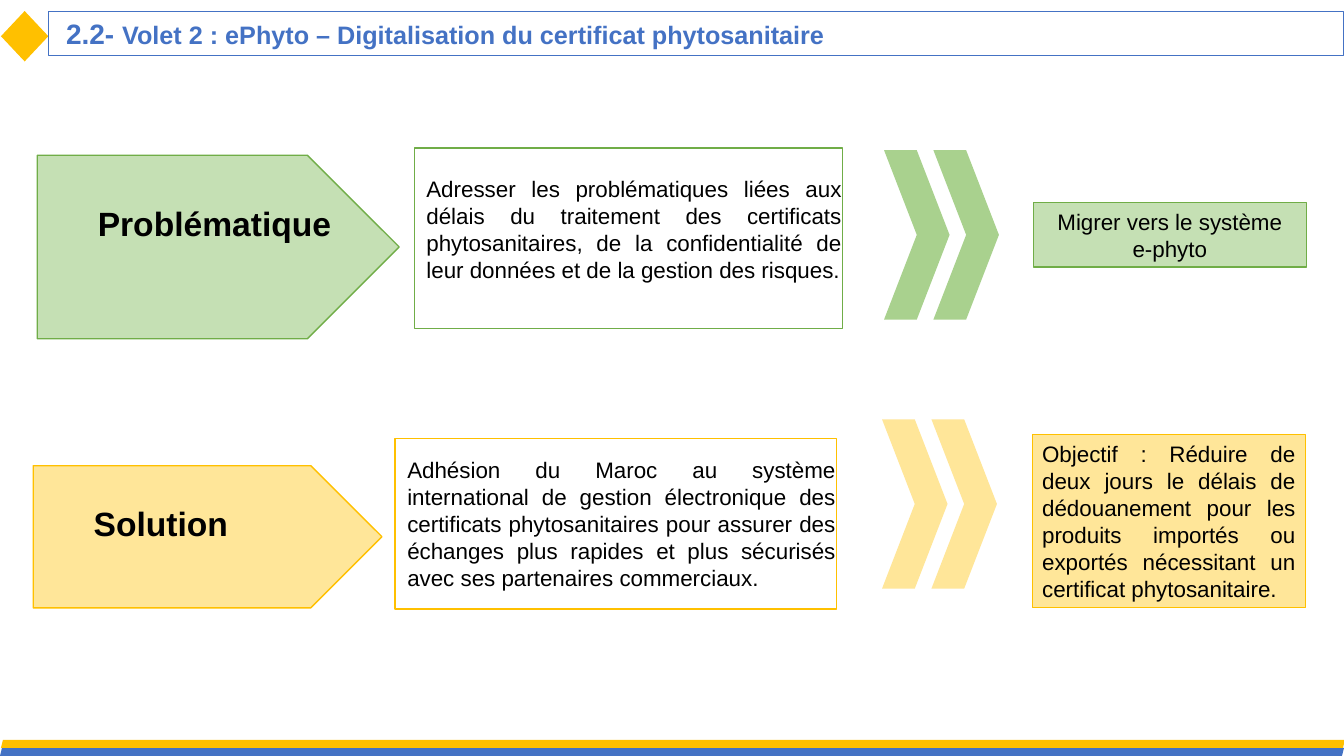
import pptx
import pptx.util
import pptx.dml.color
import pptx.enum.shapes
import pptx.enum.text

RGB = pptx.dml.color.RGBColor
KIND = pptx.enum.shapes.MSO_SHAPE
ALIGN = pptx.enum.text.PP_ALIGN
ANCHOR = pptx.enum.text.MSO_ANCHOR
Pt = pptx.util.Pt
CELL = pptx.util.Inches(0.1)
COLS, ROWS = 133.33, 75

BLACK = RGB(0x00, 0x00, 0x00)
WHITE = RGB(0xFF, 0xFF, 0xFF)
BLUE = RGB(0x44, 0x72, 0xC4)
GOLD = RGB(0xFF, 0xC0, 0x00)
CREAM = RGB(0xFF, 0xE6, 0x99)
GREEN = RGB(0x70, 0xAD, 0x47)
LEAF = RGB(0xA9, 0xD1, 0x8E)
MINT = RGB(0xC5, 0xE0, 0xB4)


def draw(slide, kind, box, slot, fill=None, line=None, width=1):
    left, top = box[0] + slot[0], box[1] + slot[1]
    spot = [round(n * CELL) for n in (left, top, slot[2], slot[3])]
    shape = slide.shapes.add_shape(kind, *spot)
    shape.shadow.inherit = False
    if fill is None:
        shape.fill.background()
    else:
        shape.fill.solid()
        shape.fill.fore_color.rgb = fill
    if line is None:
        shape.line.fill.background()
    else:
        shape.line.color.rgb = line
        shape.line.width = Pt(width)
    return shape


def write(shape, text, size=16, align=ALIGN.JUSTIFY, anchor=ANCHOR.MIDDLE,
          pads=(1, 0.5, 1, 0.5), bold=False, color=BLACK):
    frame = shape.text_frame
    frame.word_wrap = True
    frame.vertical_anchor = anchor
    (frame.margin_left, frame.margin_top,
     frame.margin_right, frame.margin_bottom) = [round(n * CELL) for n in pads]
    para = frame.paragraphs[0]
    para.text = text
    para.alignment = align
    font = para.font
    font.name, font.size, font.bold = "Arial", Pt(size), bold
    font.color.rgb = color
    return para


def header(slide, box):
    wide, high = box[2], box[3]
    draw(slide, KIND.DIAMOND, box, (0.1, 0, 4.7, high), GOLD)
    bar = draw(slide, KIND.RECTANGLE, box, (4.8, 0, wide - 4.8, 4.4),
               line=BLUE, width=0.75)
    para = write(bar, "2.2- ", 20, ALIGN.LEFT, pads=(1.75, 0.5, 1, 0.5),
                 bold=True, color=BLUE)
    run = para.add_run()
    run.text = "Volet 2 : ePhyto – Digitalisation du certificat phytosanitaire"
    run.font.size = Pt(18)


def footer(slide, box):
    half = box[3] / 2
    draw(slide, KIND.PARALLELOGRAM, box, (0, half, box[2], half), BLUE)
    draw(slide, KIND.PARALLELOGRAM, box, (0.1, 0, box[2], half), GOLD)


def band(slide, box, slots, texts, tones, drop, lift):
    pale, mid, edge = tones
    plate, body, arrow, goal = slots
    shape = draw(slide, KIND.PENTAGON, box, plate, pale, edge)
    write(shape, texts[0], 24, ALIGN.LEFT, ANCHOR.TOP,
          (6, drop, 1, 0.5), True)
    shape = draw(slide, KIND.RECTANGLE, box, body, WHITE, edge)
    write(shape, texts[1], pads=(1.2, 0.1, 0.1, lift))
    for step in range(2):
        place = (arrow[0] + step * 4.9, arrow[1], 6.5, 16.8)
        draw(slide, KIND.CHEVRON, box, place, mid)
    shape = draw(slide, KIND.RECTANGLE, box, goal, pale, edge)
    write(shape, texts[2],
          align=ALIGN.CENTER if "\v" in texts[2] else ALIGN.JUSTIFY)


def main():
    deck = pptx.Presentation()
    deck.slide_width = round(COLS * CELL)
    deck.slide_height = ROWS * CELL
    slide = deck.slides.add_slide(deck.slide_layouts[6])
    header(slide, (0, 1.1, COLS, 5))
    band(slide, (3.7, 14.7, 125.9, 18.9),
         ((0, 0.7, 35.9, 18.2), (37.4, 0, 42.5, 17.9),
          (84, 0.2), (98.8, 5.4, 27.1, 6.4)),
         ("Problématique",
          "Adresser les problématiques liées aux délais du traitement des "
          "certificats phytosanitaires, de la confidentialité de leur données "
          "et de la gestion des risques.",
          "Migrer vers le système\ve-phyto"),
         (MINT, LEAF, GREEN), 4.7, 1.9)
    band(slide, (3.3, 41.6, 126.2, 18.8),
         ((0, 4.6, 34.6, 14.1), (35.9, 1.9, 43.8, 16.9),
          (84.2, 0), (99.1, 1.5, 27.1, 17.2)),
         ("Solution",
          "Adhésion du Maroc au système international de gestion électronique "
          "des certificats phytosanitaires pour assurer des échanges plus "
          "rapides et plus sécurisés avec ses partenaires commerciaux.",
          "Objectif : Réduire de deux jours le délais de dédouanement pour les "
          "produits importés ou exportés nécessitant un certificat "
          "phytosanitaire."),
         (CREAM, CREAM, GOLD), 3.7, 0.1)
    footer(slide, (0, 73.4, COLS, 1.6))
    deck.save("out.pptx")


if __name__ == "__main__":
    main()
